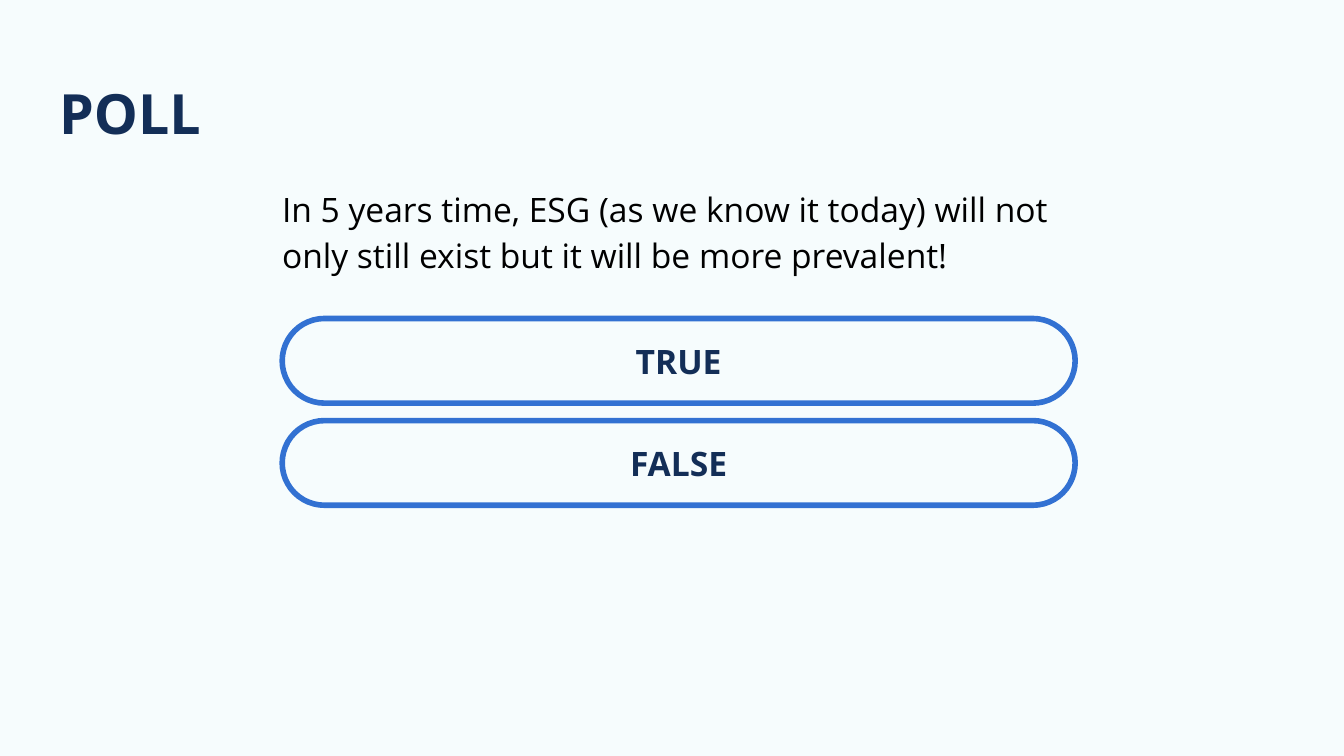
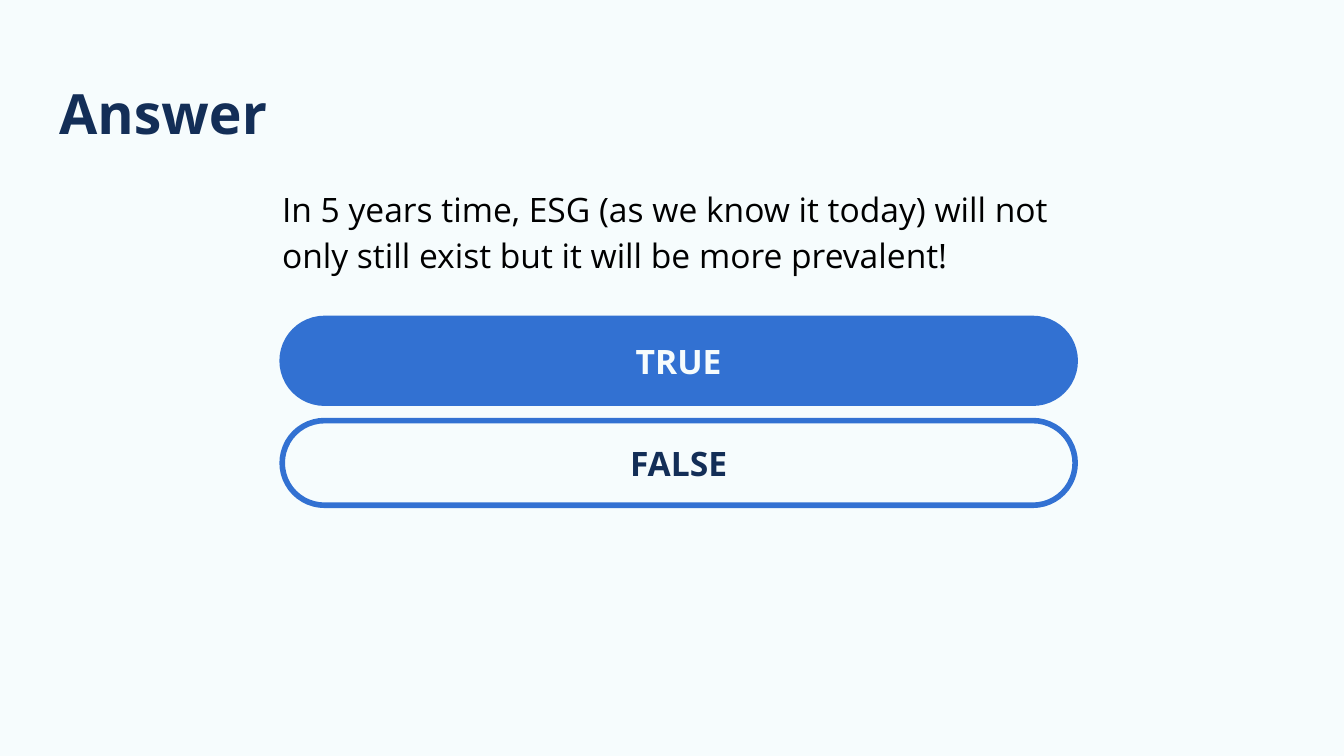
from dataclasses import dataclass

from pptx import Presentation
from pptx import util as u
from pptx.dml.color import RGBColor
from pptx.enum import shapes, text

SLIDE_W = 10
SLIDE_H = SLIDE_W * 9 / 16
TITLE_ONLY = 5

# Places in inches: left, top, width, height
TITLE_AREA = (0.34, 0.49, 9.32, 0.63)
QUESTION_AREA = (2, 1.26, 5.99, 0.85)
FIRST_OPTION = (2.1, 2.37, 5.9, 0.63)
OPTION_PITCH = 0.76

QUESTION = ("In 5 years time, ESG (as we know it today) will not "
            "only still exist but it will be more prevalent!")
OPTIONS = ("TRUE", "FALSE")
SLIDES = (("POLL", None), ("Answer", "TRUE"))  # title, highlighted option


@dataclass(frozen=True)
class Theme:
    font: str = "Open Sans"
    background: RGBColor = RGBColor.from_string("F6FCFD")
    navy: RGBColor = RGBColor.from_string("132E57")
    blue: RGBColor = RGBColor.from_string("3271D2")
    black: RGBColor = RGBColor.from_string("000000")
    title_size: float = 29.7
    body_size: float = 18
    outline: float = 3
    inset: float = 0.1


THEME = Theme()


def apply(target, values):
    for name, value in values.items():
        setattr(target, name, value)


def place(element, area):
    names = ("left", "top", "width", "height")
    apply(element, dict(zip(names, map(u.Inches, area))))


def write(element, words, size, color, bold=False, frame=None, paragraph=None):
    """Fill an element with one formatted paragraph."""
    inset = u.Inches(THEME.inset)
    box = element.text_frame
    apply(box, {
        "word_wrap": True,
        "auto_size": text.MSO_AUTO_SIZE.NONE,
        "vertical_anchor": text.MSO_ANCHOR.TOP,
        "margin_left": inset, "margin_right": inset,
        "margin_top": inset, "margin_bottom": inset,
        **(frame or {}),
    })
    line = box.paragraphs[0]
    line.text = words
    apply(line, {"alignment": text.PP_ALIGN.LEFT, **(paragraph or {})})
    style = line.runs[0].font
    apply(style, {"name": THEME.font, "size": u.Pt(size), "bold": bold})
    style.color.rgb = color


def add_title(slide, words):
    place(slide.shapes.title, TITLE_AREA)
    write(slide.shapes.title, words, THEME.title_size, THEME.navy, bold=True)


def add_question(slide):
    question = slide.shapes.add_textbox(*map(u.Inches, QUESTION_AREA))
    write(question, QUESTION, THEME.body_size, THEME.black,
          frame={"auto_size": text.MSO_AUTO_SIZE.SHAPE_TO_FIT_TEXT},
          paragraph={"line_spacing": 1.15})


def add_option(slide, row, words, highlighted):
    left, top, width, height = FIRST_OPTION
    area = (left, top + row * OPTION_PITCH, width, height)
    pill = slide.shapes.add_shape(shapes.MSO_SHAPE.ROUNDED_RECTANGLE,
                                  *map(u.Inches, area))
    pill.adjustments[0] = 0.5
    pill.shadow.inherit = False
    pill.line.color.rgb = THEME.blue
    pill.line.width = u.Pt(THEME.outline)
    if highlighted:
        pill.fill.solid()
        pill.fill.fore_color.rgb = THEME.blue
    else:
        pill.fill.background()
    write(pill, words, THEME.body_size,
          THEME.background if highlighted else THEME.navy, bold=True,
          frame={"vertical_anchor": text.MSO_ANCHOR.MIDDLE},
          paragraph={"alignment": text.PP_ALIGN.CENTER})


def main():
    deck = Presentation()
    apply(deck, {"slide_width": u.Inches(SLIDE_W),
                 "slide_height": u.Inches(SLIDE_H)})

    # Shared background
    backdrop = deck.slide_master.background.fill
    backdrop.solid()
    backdrop.fore_color.rgb = THEME.background

    # Poll, then the same poll with its answer highlighted
    for title, answer in SLIDES:
        slide = deck.slides.add_slide(deck.slide_layouts[TITLE_ONLY])
        add_title(slide, title)
        add_question(slide)
        for row, option in enumerate(OPTIONS):
            add_option(slide, row, option, option == answer)

    deck.save("out.pptx")


if __name__ == "__main__":
    main()
